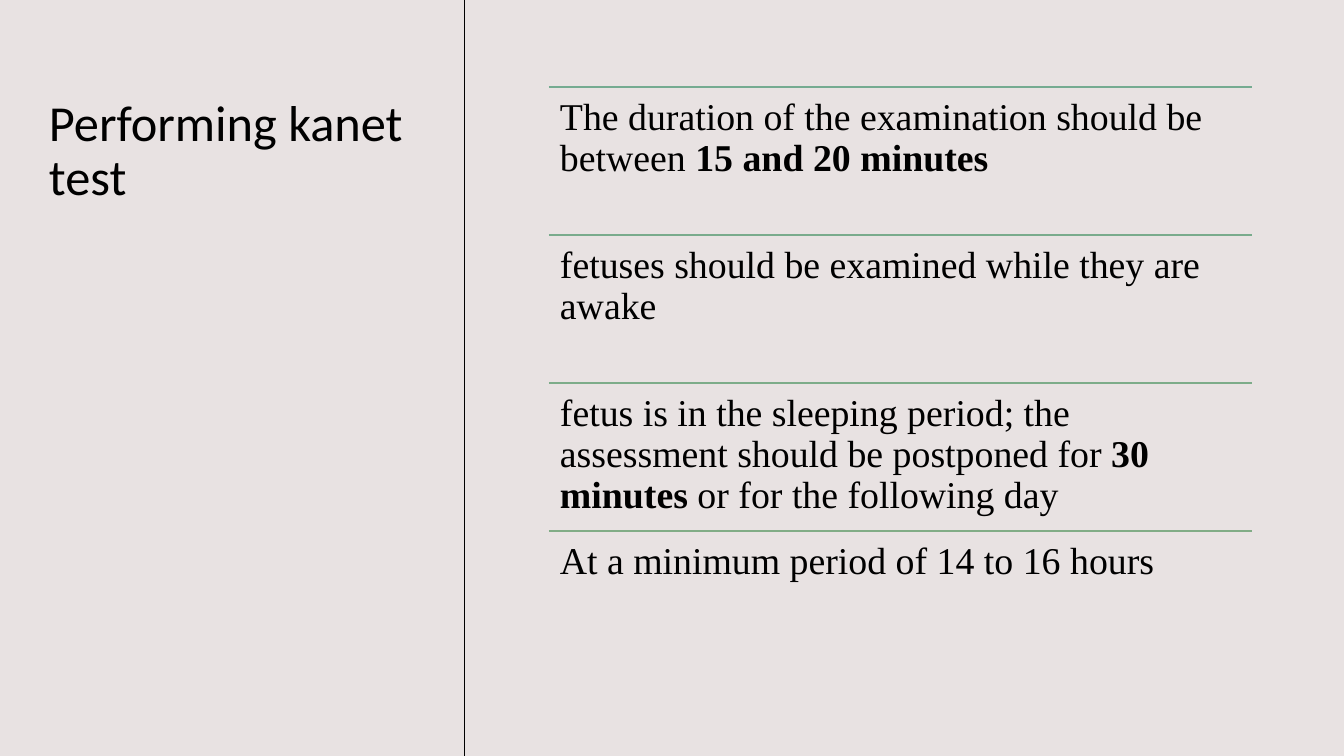
from lxml.etree import SubElement
from pptx import Presentation
from pptx.dml.color import RGBColor
from pptx.enum.shapes import MSO_CONNECTOR
from pptx.enum.text import MSO_ANCHOR
from pptx.oxml.ns import qn
from pptx.util import Pt

TITLE = "Performing kanet test"
STEPS = [
    ("rule1", [("The duration of the examination should be between ", False),
               ("15 and 20 minutes", True)]),
    ("rule2", [("fetuses should be examined while they are awake", False)]),
    ("rule3", [("fetus is in the sleeping period; the assessment should be postponed for ", False),
               ("30 minutes ", True),
               ("or for the following day", False)]),
    ("rule4", [("At a minimum period of 14 to 16 hours", False)]),
]
COLORS = {
    "background": "E8E2E2",
    "ink": "000000",
    "rule1": "75AB91",
    "rule2": "79AB8C",
    "rule3": "7DAC89",
    "rule4": "81AC86",
}
TITLE_FONT = {"name": "Calibri", "size": Pt(36)}
STEP_FONT = {"name": "Times New Roman", "size": Pt(27)}

PAGE_WIDTH, PAGE_HEIGHT = 1344, 756
TITLE_BOX = (39, 93, 384, 572)
DIVIDER_X = 464
STEP_LEFT, STEP_TOP, STEP_WIDTH, STEP_HEIGHT = 549, 87, 703, 148
EMU_PER_PX = 914400 / 100.8


def px(length):
    return round(length * EMU_PER_PX)


def color(name):
    return RGBColor.from_string(COLORS[name])


def add_line(page, start, end, color_name, weight):
    line = page.shapes.add_connector(MSO_CONNECTOR.STRAIGHT, *map(px, start + end))
    line.line.color.rgb = color(color_name)
    line.line.width = Pt(weight)
    SubElement(line._element.spPr, qn("a:effectLst"))


def add_text(page, bounds, spans, font, margins, space_after=0):
    box = page.shapes.add_textbox(*map(px, bounds))
    frame = box.text_frame
    frame.word_wrap = True
    frame.vertical_anchor = MSO_ANCHOR.TOP
    for side, margin in zip(("left", "top", "right", "bottom"), margins):
        setattr(frame, f"margin_{side}", px(margin))
    para = frame.paragraphs[0]
    para.line_spacing = 0.9
    para.space_after = Pt(space_after)
    for text, bold in spans:
        span = para.add_run()
        span.text = text
        for name, value in {**font, "bold": bold}.items():
            setattr(span.font, name, value)
        span.font.color.rgb = color("ink")


def main():
    deck = Presentation()
    deck.slide_width, deck.slide_height = px(PAGE_WIDTH), px(PAGE_HEIGHT)
    page = deck.slides.add_slide(deck.slide_layouts[6])
    page.background.fill.solid()
    page.background.fill.fore_color.rgb = color("background")

    add_text(page, TITLE_BOX, [(TITLE, False)], TITLE_FONT, (10, 5, 10, 5))
    add_line(page, (DIVIDER_X, PAGE_HEIGHT), (DIVIDER_X, 0), "ink", 0.5)
    for index, (rule, spans) in enumerate(STEPS):
        top = STEP_TOP + index * STEP_HEIGHT
        add_line(page, (STEP_LEFT, top), (STEP_LEFT + STEP_WIDTH, top), rule, 1)
        add_text(page, (STEP_LEFT, top, STEP_WIDTH, STEP_HEIGHT), spans,
                 STEP_FONT, (11, 11, 11, 11), 9)
    deck.save("out.pptx")


if __name__ == "__main__":
    main()
